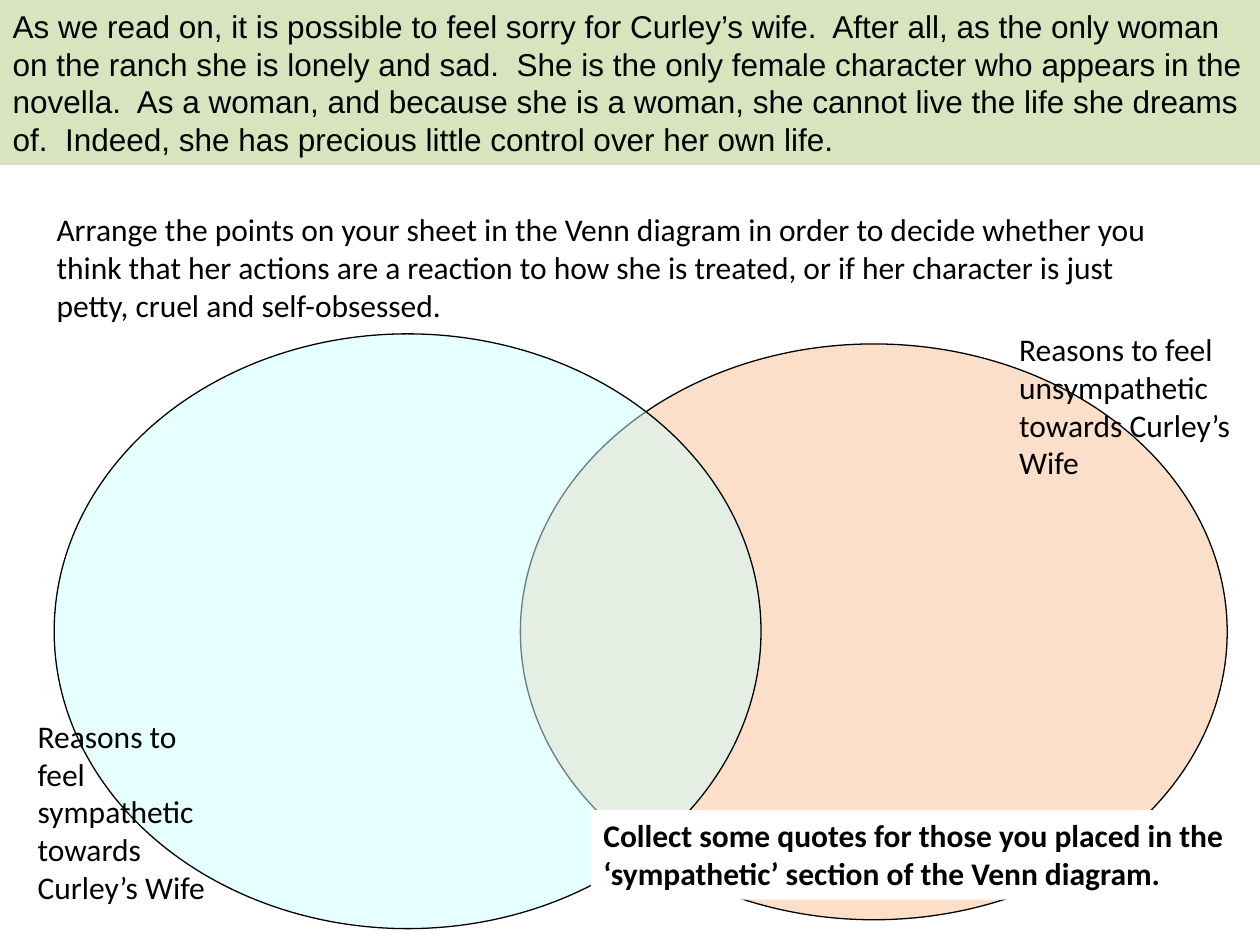
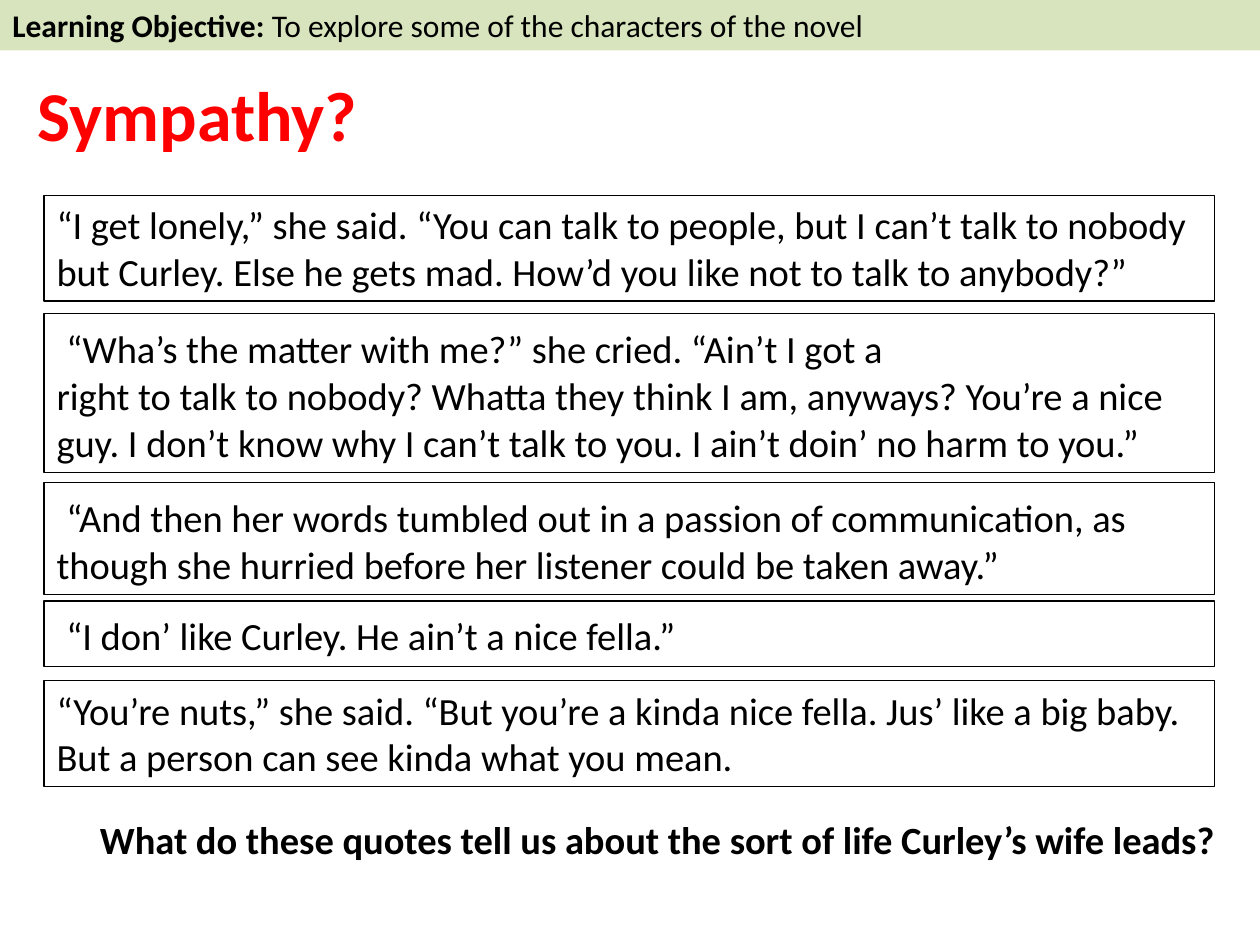
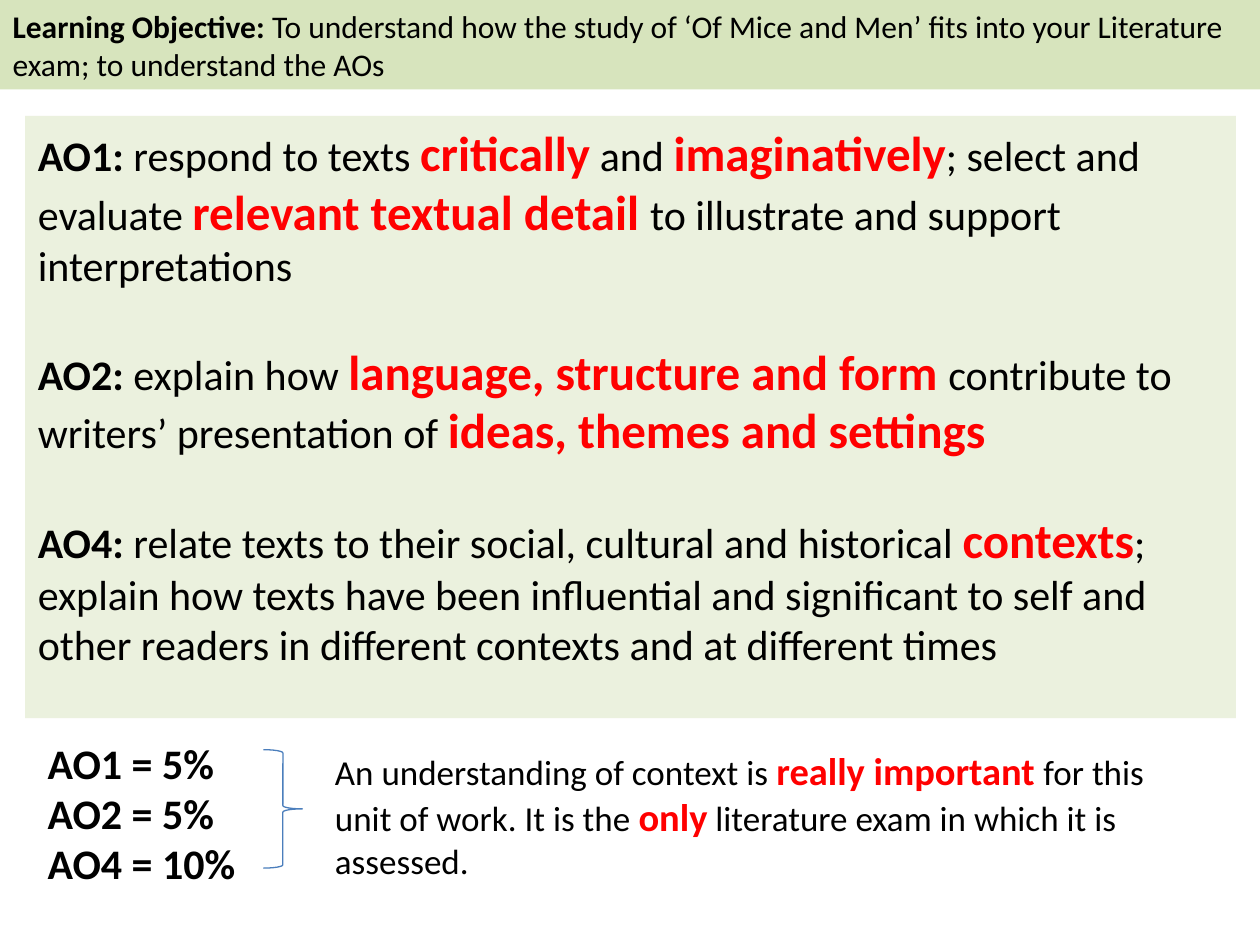
from dataclasses import dataclass
from typing import Optional

from lxml.etree import SubElement
from pptx import Presentation
from pptx.dml.color import RGBColor
from pptx.enum.shapes import MSO_SHAPE
from pptx.enum.text import MSO_ANCHOR, MSO_AUTO_SIZE, PP_ALIGN
from pptx.oxml.ns import qn
from pptx.util import Emu, Pt

PX = 9144
WIDTH, HEIGHT = 1000, 750
COLORS = {
    "ink": "000000",
    "key": "FF0000",
    "paper": "FFFFFF",
    "band": "D7E4BD",
    "panel": "C3D69B",
    "sympathetic": "CCFFFF",
    "unsympathetic": "FABF8F",
    "brace": "4B7EBC",
}


@dataclass(frozen=True)
class Run:
    text: str
    size: int = 18
    bold: bool = False
    color: str = "ink"
    font: str = "Calibri"


@dataclass(frozen=True)
class Box:
    left: int
    top: int
    width: int
    height: int
    paragraphs: tuple = ()
    fill: Optional[str] = None
    opacity: int = 100
    line: Optional[str] = None
    shape: MSO_SHAPE = MSO_SHAPE.RECTANGLE
    align: PP_ALIGN = PP_ALIGN.LEFT
    anchor: MSO_ANCHOR = MSO_ANCHOR.TOP
    gap: int = 0


def rgb(name: str) -> RGBColor:
    return RGBColor.from_string(COLORS[name])


def px(value: int) -> Emu:
    return Emu(value * PX)


def write(sp, box: Box) -> None:
    tf = sp.text_frame
    tf.word_wrap = True
    tf.auto_size = MSO_AUTO_SIZE.NONE
    tf.vertical_anchor = box.anchor
    for i, runs in enumerate(box.paragraphs):
        p = tf.add_paragraph() if i else tf.paragraphs[0]
        p.alignment = box.align
        p.space_before = Pt(box.gap if i else 0)
        if sp.is_placeholder:
            pPr = p._p.get_or_add_pPr()
            pPr.set("marL", "0")
            pPr.set("indent", "0")
            SubElement(pPr, qn("a:buNone"))
        for run in runs:
            r = p.add_run()
            r.text = run.text
            r.font.name = run.font
            r.font.size = Pt(run.size)
            r.font.bold = run.bold
            r.font.color.rgb = rgb(run.color)


def paint(sp, box: Box) -> None:
    if box.fill:
        sp.fill.solid()
        sp.fill.fore_color.rgb = rgb(box.fill)
        if box.opacity < 100:
            clr = sp._element.spPr.find(qn("a:solidFill")).find(qn("a:srgbClr"))
            SubElement(clr, qn("a:alpha")).set("val", str(box.opacity * 1000))
    else:
        sp.fill.background()
    if box.line:
        sp.line.color.rgb = rgb(box.line)
        sp.line.width = Pt(0.75)
    else:
        sp.line.fill.background()


def draw(s, box: Box, placeholder=None):
    frame = [px(v) for v in (box.left, box.top, box.width, box.height)]
    if placeholder is not None:
        sp = placeholder
        sp.left, sp.top, sp.width, sp.height = frame
    elif box.fill or box.line:
        sp = s.shapes.add_shape(box.shape, *frame)
        sp.shadow.inherit = False
    else:
        sp = s.shapes.add_textbox(*frame)
    paint(sp, box)
    if box.paragraphs:
        write(sp, box)
    return sp


def band(height: int, *runs: Run) -> Box:
    return Box(0, 0, WIDTH, height, (runs,), fill="band", anchor=MSO_ANCHOR.MIDDLE)


def objective(height: int, text: str) -> Box:
    return band(height, Run("Learning Objective: ", bold=True), Run(text))


def key(text: str, size: int) -> Run:
    return Run(text, size, True, "key")


def venn_slide(prs) -> None:
    s = prs.slides.add_slide(prs.slide_layouts[5])
    draw(s, band(131, Run(
        "As we read on, it is possible to feel sorry for Curley’s wife.  After all, "
        "as the only woman on the ranch she is lonely and sad.  She is the only female "
        "character who appears in the novella.  As a woman, and because she is a woman, "
        "she cannot live the life she dreams of.  Indeed, she has precious little "
        "control over her own life.", font="Arial")), s.shapes.title)
    draw(s, Box(35, 162, 921, 101, ((Run(
        "Arrange the points on your sheet in the Venn diagram in order to decide whether "
        "you think that her actions are a reaction to how she is treated, or if her "
        "character is just petty, cruel and self-obsessed."),),)))
    for left, top, height, fill in (
        (413, 273, 457, "unsympathetic"),
        (43, 265, 472, "sympathetic"),
    ):
        draw(s, Box(left, top, 561, height, fill=fill, opacity=49, line="ink",
                    shape=MSO_SHAPE.OVAL))
    for left, top, width, height, feeling in (
        (20, 564, 165, 162, "sympathetic"),
        (799, 257, 189, 131, "unsympathetic"),
    ):
        label = Run(f"Reasons to feel {feeling} towards Curley’s Wife")
        draw(s, Box(left, top, width, height, ((label,),)))
    task = Run("Collect some quotes for those you placed in the ‘sympathetic’ section "
               "of the Venn diagram.", bold=True)
    draw(s, Box(469, 643, 512, 71, ((task,),), fill="paper"))


def quotes_slide(prs) -> None:
    s = prs.slides.add_slide(prs.slide_layouts[5])
    draw(s, objective(40, "To explore some of the characters of the novel"))
    draw(s, Box(20, 52, 638, 77, ((key("Sympathy?", 40),),)), s.shapes.title)
    lead = Run(" ", 25)
    quotes = (
        (155, 84, ((Run(
            "“I get lonely,” she said. “You can talk to people, but I can’t talk to "
            "nobody but Curley. Else he gets mad. How’d you like not to talk to "
            "anybody?”", 22),),)),
        (249, 126, (
            (lead, Run("“Wha’s the matter with me?” she cried. “Ain’t I got a", 22)),
            (Run("right to talk to nobody? Whatta they think I am, anyways? You’re a "
                 "nice guy. I don’t know why I can’t talk to you. I ain’t doin’ no harm "
                 "to you.”", 22),))),
        (383, 89, ((lead, Run(
            "“And then her words tumbled out in a passion of communication, as though "
            "she hurried before her listener could be taken away.”", 22)),)),
        (477, 52, ((lead, Run("“I don’ like Curley. He ain’t a nice fella.”", 22)),)),
        (540, 84, ((Run(
            "“You’re nuts,” she said. “But you’re a kinda nice fella. Jus’ like a big "
            "baby. But a person can see kinda what you mean.", 22),),)),
    )
    for top, height, paragraphs in quotes:
        draw(s, Box(35, top, 929, height, paragraphs, line="ink"))
    question = Run("What do these quotes tell us about the sort of life Curley’s wife "
                   "leads? ", 22, True)
    draw(s, Box(20, 643, 961, 47, ((question,),), align=PP_ALIGN.RIGHT))


def exam_slide(prs) -> None:
    s = prs.slides.add_slide(prs.slide_layouts[1])
    draw(s, objective(71, "To understand how the study of ‘Of Mice and Men’ fits into "
                          "your Literature exam; to understand the AOs"), s.shapes.title)
    aims = (
        (Run("AO1: ", 24, True), Run("respond to texts ", 24), key("critically", 28),
         Run(" and ", 24), key("imaginatively", 28), Run("; select and evaluate ", 24),
         key("relevant textual detail ", 28),
         Run("to illustrate and support interpretations", 24)),
        (Run("AO2: ", 24, True), Run("explain how ", 24),
         key("language, structure and form ", 28),
         Run("contribute to writers’ presentation of ", 24),
         key("ideas, themes and settings", 28)),
        (Run("AO4: ", 24, True),
         Run("relate texts to their social, cultural and historical ", 24),
         key("contexts", 28),
         Run("; explain how texts have been influential and significant to self and "
             "other readers in different contexts and at different times", 24)),
    )
    draw(s, Box(20, 92, 961, 478, aims, fill="panel", opacity=33, gap=29),
         s.placeholders[1])
    weights = (("AO1", 5), ("AO2", 5), ("AO4", 10))
    draw(s, Box(28, 580, 189, 131, tuple(
        (Run(f"{aim} = {share}%", 24, True),) for aim, share in weights)))
    draw(s, Box(209, 595, 31, 94, line="brace", shape=MSO_SHAPE.RIGHT_BRACE))
    draw(s, Box(256, 588, 701, 118, ((
        Run("An understanding of context is ", 20), key("really important ", 22),
        Run("for this unit of work. It is the ", 20), key("only", 22),
        Run(" literature exam in which it is assessed.", 20)),)))


def main() -> None:
    prs = Presentation()
    prs.slide_width, prs.slide_height = px(WIDTH), px(HEIGHT)
    for build in (venn_slide, quotes_slide, exam_slide):
        build(prs)
    prs.save("out.pptx")


if __name__ == "__main__":
    main()
